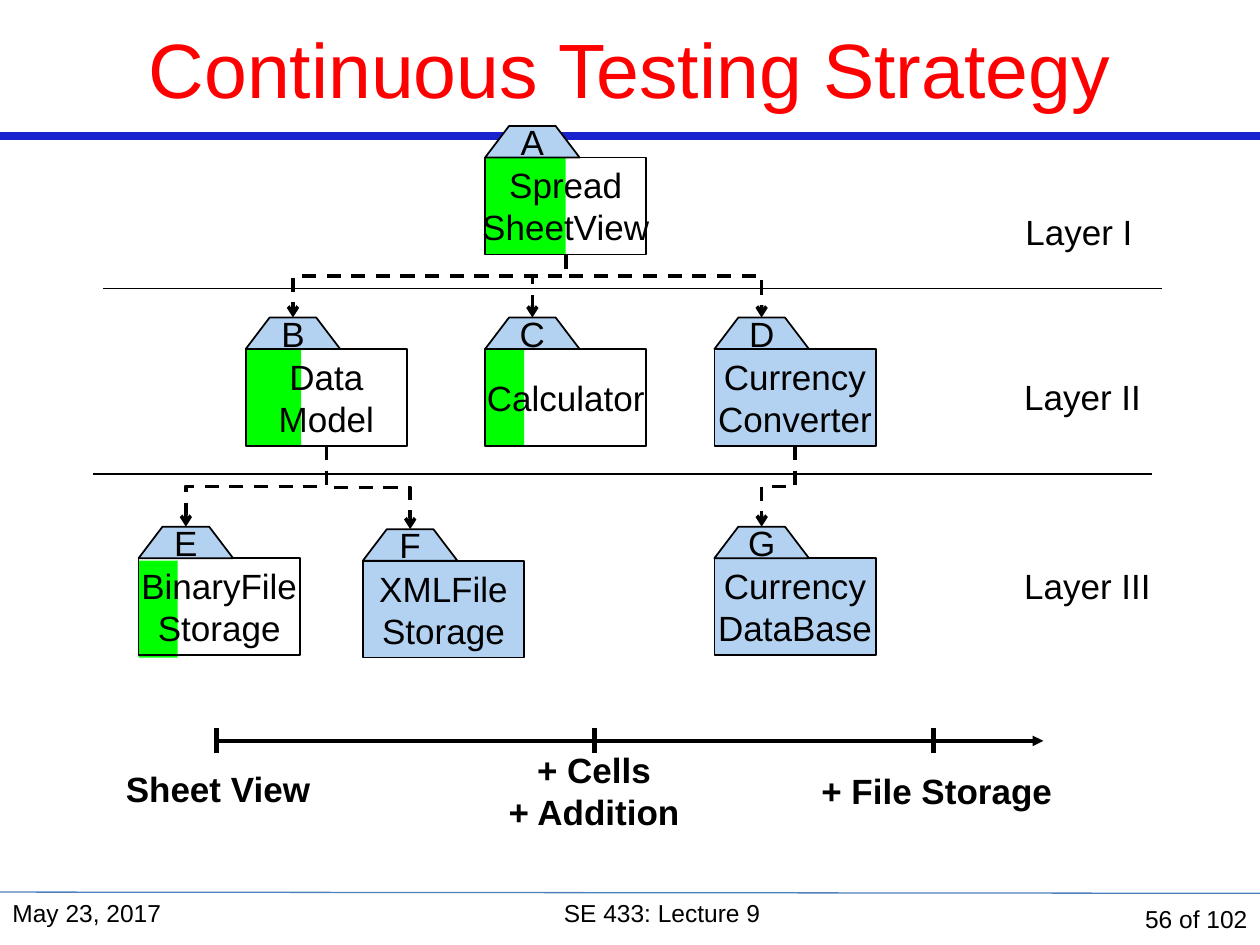
from dataclasses import dataclass

from lxml.etree import SubElement
from pptx import Presentation
from pptx.dml.color import RGBColor
from pptx.enum.dml import MSO_LINE
from pptx.enum.shapes import MSO_CONNECTOR as Conn, MSO_SHAPE as Shape
from pptx.enum.text import MSO_ANCHOR as Anchor, PP_ALIGN as Align
from pptx.oxml.ns import qn
from pptx.util import Inches, Pt

BLACK = RGBColor(0x00, 0x00, 0x00)
RED = RGBColor(0xFF, 0x00, 0x00)
GREEN = RGBColor(0x00, 0xFF, 0x00)
PALE_BLUE = RGBColor(0xB3, 0xD1, 0xF0)
RULE_BLUE = RGBColor(0x18, 0x22, 0xCD)
FOOTER_BLUE = RGBColor(0x4F, 0x81, 0xBD)

BOX_W, BOX_H = 1.28, 0.77
TAB_W, TAB_H, TAB_SLANT = 0.75, 0.25, 0.19


@dataclass
class Package:
    letter: str
    text: str
    x: float
    y: float
    tested: tuple[float, ...] = ()
    tested_drop: float = 0

    @property
    def entry(self) -> tuple[float, float]:
        return self.x + TAB_W / 2, self.y - TAB_H

    @property
    def exit(self) -> tuple[float, float]:
        return self.x + BOX_W / 2, self.y + BOX_H


@dataclass
class Label:
    text: str
    x: float
    y: float
    w: float
    h: float
    size: int = 20
    bold: bool = False
    align: Align = Align.LEFT
    anchor: Anchor = Anchor.TOP
    wrap: bool = False


PACKAGES = [
    Package("A", "Spread\vSheetView", 3.85, 1.25, (0.31, 0.18, 0.15)),
    Package("B", "Data\vModel", 1.95, 2.77, (0.13, 0.31)),
    Package("C", "Calculator", 3.85, 2.77, (0.31,)),
    Package("D", "Currency\nConverter", 5.67, 2.77),
    Package("E", "BinaryFile\vStorage", 1.1, 4.43, (0.31,), 0.02),
    Package("F", "XMLFile\vStorage", 2.88, 4.45),
    Package("G", "Currency\vDataBase", 5.67, 4.43),
]

DEPENDENCIES = {"A": ("BCD", 0.34), "D": ("G", 0.5), "B": ("FE", 0.5)}

LABELS = [
    Label("Layer I", 8.04, 1.62, 1.06, 0.43),
    Label("Layer II", 8.03, 2.93, 1.14, 0.43),
    Label("Layer III", 8.03, 4.43, 1.21, 0.43),
    Label("Sheet View", 0.89, 6.04, 1.68, 0.44, 20, True, Align.CENTER, Anchor.MIDDLE),
    Label("+ Cells\n+ Addition", 3.93, 5.89, 1.57, 0.77, 20, True, Align.CENTER, Anchor.MIDDLE),
    Label("+ File Storage", 6.41, 6.05, 2.05, 0.44, 20, True, Align.CENTER, Anchor.MIDDLE),
    Label("May 23, 2017", 0, 7.08, 2.17, 0.42, 14, wrap=True),
    Label("SE 433: Lecture 9", 2.17, 7.08, 6.17, 0.42, 14, align=Align.CENTER, wrap=True),
    Label("56 of 102", 8.33, 7.08, 1.67, 0.42, 14, align=Align.RIGHT,
          anchor=Anchor.MIDDLE, wrap=True),
]


def write(sp, text: str, size: int = 20, color: RGBColor = BLACK, bold: bool = False,
          align: Align = Align.CENTER, anchor: Anchor = Anchor.MIDDLE,
          wrap: bool = False) -> None:
    tf = sp.text_frame
    tf.text = text
    tf.word_wrap = wrap
    tf.vertical_anchor = anchor
    for p in tf.paragraphs:
        p.alignment = align
        p.font.name = "Arial"
        p.font.size = Pt(size)
        p.font.bold = bold
        p.font.color.rgb = color


def paint(sp, fill: RGBColor | None, outlined: bool = True) -> None:
    sp.shadow.inherit = False
    if fill is None:
        sp.fill.background()
    else:
        sp.fill.solid()
        sp.fill.fore_color.rgb = fill
    if outlined:
        sp.line.color.rgb = BLACK
        sp.line.width = Pt(1)
    else:
        sp.line.fill.background()


def add_rect(s, x: float, y: float, w: float, h: float, fill: RGBColor | None,
             outlined: bool = True):
    sp = s.shapes.add_shape(Shape.RECTANGLE, Inches(x), Inches(y), Inches(w), Inches(h))
    paint(sp, fill, outlined)
    return sp


def add_line(s, x1: float, y1: float, x2: float, y2: float, width: float = 1,
             color: RGBColor = BLACK, head: str = "", kind: Conn = Conn.STRAIGHT):
    line = s.shapes.add_connector(kind, Inches(x1), Inches(y1), Inches(x2), Inches(y2))
    line.line.color.rgb = color
    line.line.width = Pt(width)
    if head:
        SubElement(line.line._get_or_add_ln(), qn("a:tailEnd"), type=head)
    SubElement(line._element.spPr, qn("a:effectLst"))
    return line


def add_dependency(s, start: tuple[float, float], end: tuple[float, float],
                   bend: float) -> None:
    (x1, y1), (x2, y2) = start, end
    w, h = y2 - y1, abs(x2 - x1)
    x, y = (x1 + x2 - w) / 2, (y1 + y2 - h) / 2
    line = add_line(s, x, y, x + w, y + h, 2, head="arrow", kind=Conn.ELBOW)
    line.line.dash_style = MSO_LINE.DASH
    sp_pr = line._element.spPr
    xfrm = sp_pr.find(qn("a:xfrm"))
    if x2 < x1:
        xfrm.set("rot", str(90 * 60000))
    else:
        xfrm.set("rot", str(270 * 60000))
        xfrm.set("flipH", "1")
    guides = sp_pr.find(qn("a:prstGeom")).get_or_add_avLst()
    SubElement(guides, qn("a:gd"), name="adj1", fmla=f"val {round(bend * 100000)}")


def add_tested(s, pkg: Package) -> None:
    x = pkg.x
    for w in pkg.tested:
        add_rect(s, x, pkg.y + pkg.tested_drop, w, BOX_H, GREEN, outlined=False)
        x += w


def add_package(s, pkg: Package) -> None:
    fill = None if pkg.tested else PALE_BLUE
    write(add_rect(s, pkg.x, pkg.y, BOX_W, BOX_H, fill), pkg.text)
    top = pkg.y - TAB_H
    outline = s.shapes.build_freeform(Inches(pkg.x), Inches(pkg.y))
    outline.add_line_segments([
        (Inches(pkg.x + TAB_SLANT), Inches(top)),
        (Inches(pkg.x + TAB_W - TAB_SLANT), Inches(top)),
        (Inches(pkg.x + TAB_W), Inches(pkg.y)),
    ])
    tab = outline.convert_to_shape()
    paint(tab, PALE_BLUE)
    write(tab, pkg.letter)


def add_label(s, label: Label) -> None:
    sp = s.shapes.add_textbox(Inches(label.x), Inches(label.y),
                              Inches(label.w), Inches(label.h))
    write(sp, label.text, label.size, BLACK, label.bold, label.align,
          label.anchor, label.wrap)


def main() -> None:
    prs = Presentation()
    prs.slide_width, prs.slide_height = Inches(10), Inches(7.5)
    s = prs.slides.add_slide(prs.slide_layouts[5])

    add_line(s, 0, 1.08, 10, 1.08, 4.5, RULE_BLUE)
    add_line(s, 0, 7.08, 10, 7.09, 0.75, FOOTER_BLUE)

    title = s.shapes.title
    title.left, title.top, title.width, title.height = 0, 0, Inches(10), Inches(1.08)
    write(title, "Continuous Testing Strategy", 44, RED, wrap=True)

    for pkg in PACKAGES:
        add_tested(s, pkg)
    add_line(s, 0.82, 2.29, 9.22, 2.29)
    add_line(s, 0.74, 3.76, 9.14, 3.76)
    for pkg in PACKAGES:
        add_package(s, pkg)

    by_letter = {pkg.letter: pkg for pkg in PACKAGES}
    for user, (used, bend) in DEPENDENCIES.items():
        for letter in used:
            add_dependency(s, by_letter[user].exit, by_letter[letter].entry, bend)

    add_line(s, 1.71, 5.88, 8.28, 5.88, 2, head="triangle")
    for x in (1.72, 4.72, 7.41):
        add_line(s, x, 5.78, x, 5.98, 2.5)
    for label in LABELS:
        add_label(s, label)

    prs.save("out.pptx")


if __name__ == "__main__":
    main()
